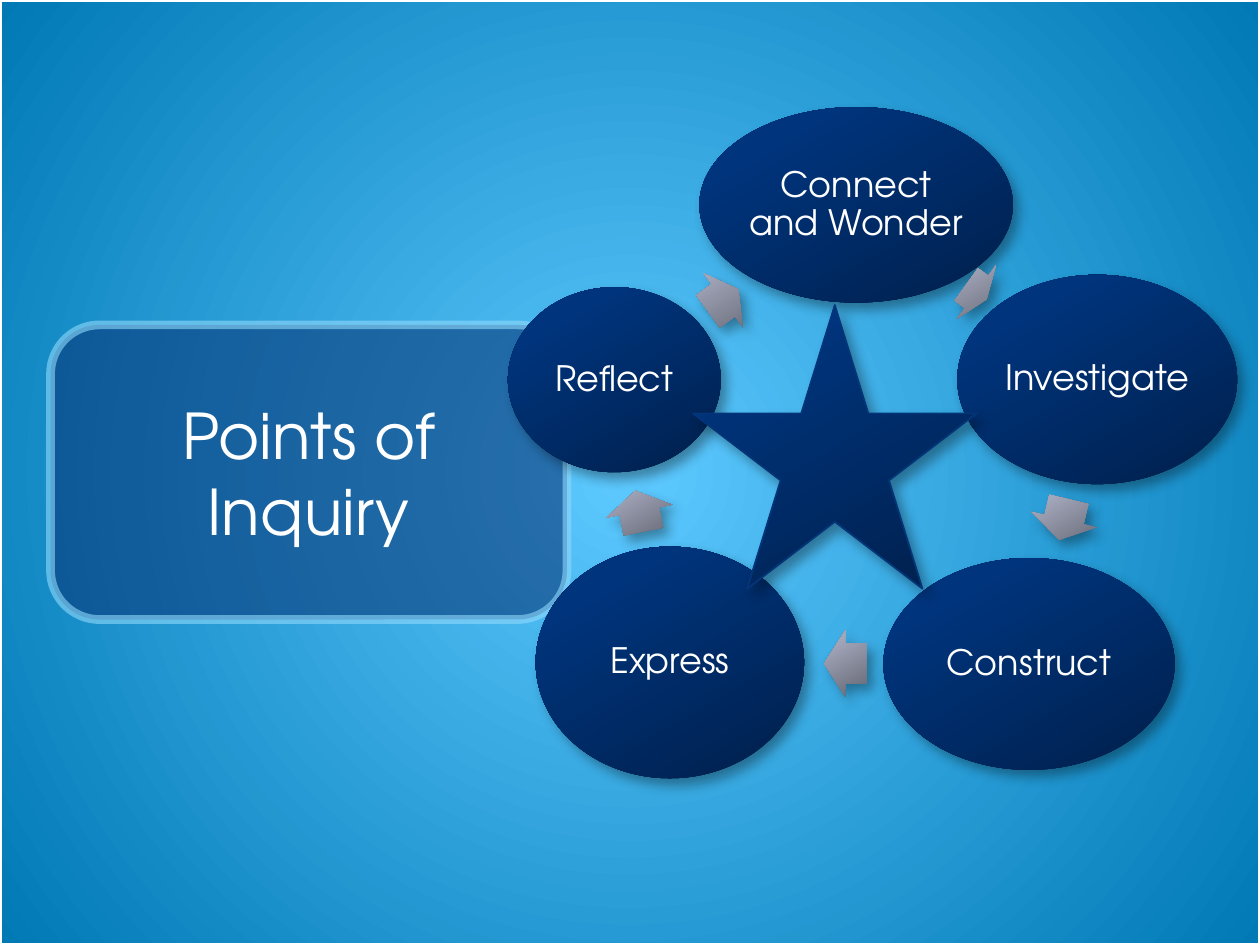
"""Build the Points of Inquiry slide: a title panel beside a five-step cycle around a star."""
from dataclasses import dataclass

from pptx import Presentation
from pptx.dml.color import RGBColor
from pptx.enum.shapes import MSO_SHAPE
from pptx.enum.text import MSO_ANCHOR, PP_ALIGN
from pptx.oxml import parse_xml
from pptx.oxml.ns import nsdecls, qn
from pptx.util import Cm, Pt

RECTANGLE = MSO_SHAPE.RECTANGLE
PANEL = MSO_SHAPE.ROUNDED_RECTANGLE
OVAL = MSO_SHAPE.OVAL
ARROW = MSO_SHAPE.RIGHT_ARROW
STAR = MSO_SHAPE.STAR_5_POINT
CENTER = PP_ALIGN.CENTER
MIDDLE = MSO_ANCHOR.MIDDLE

Stops = tuple[tuple[int, str], ...]


@dataclass(frozen=True)
class Theme:
    font: str = "TeX Gyre Adventor"
    title_size: int = 36
    step_size: int = 20
    text: str = "FFFFFF"
    frame: str = "FFFFFF"
    panel: str = "073779"
    panel_line: str = "8FD9FB"
    star_line: str = "043579"
    shadow: str = "000000"
    sky: Stops = ((0, "5DC9FF"), (100, "0079B5"))
    navy: Stops = ((0, "00204C"), (80, "00347C"), (100, "00347D"))
    gray: Stops = ((0, "646672"), (80, "A3A7BB"), (100, "A4A8BC"))


@dataclass(frozen=True)
class Place:
    left: float
    top: float
    width: float
    height: float
    turn: float = 0


@dataclass(frozen=True)
class Step:
    label: str
    oval: Place
    arrow: Place


THEME = Theme()
PAGE = Place(0, 0, 25.4, 19.05)
TITLE = Place(1.02, 6.55, 10.41, 5.94)
CENTER_STAR = Place(13.97, 6.15, 5.72, 5.72)
STEPS = (
    Step("Connect and Wonder", Place(14.1, 2.16, 6.32, 3.94), Place(19.43, 5.21, 0.51, 1.35, 36)),
    Step("Investigate", Place(19.3, 5.54, 5.64, 4.22), Place(21.03, 9.8, 0.84, 1.35, 103.4)),
    Step("Construct", Place(17.81, 11.25, 5.87, 4.27), Place(16.61, 12.7, 0.86, 1.35, 180.2)),
    Step("Express", Place(10.8, 11.02, 5.41, 4.67), Place(12.47, 9.63, 0.84, 1.35, 258.9)),
    Step("Reflect", Place(10.24, 5.79, 4.29, 3.73), Place(14.2, 5.38, 0.76, 1.35, 324)),
)
LINEAR = f'<a:lin ang="{240 * 60000}" scaled="0"/>'
RADIAL = '<a:path path="circle"><a:fillToRect l="50000" t="50000" r="50000" b="50000"/></a:path>'


def set_gradient(properties, stops: Stops, direction: str) -> None:
    """Replace the empty fill of a properties element by a gradient."""
    marks = "".join(
        f'<a:gs pos="{place * 1000}"><a:srgbClr val="{color}"/></a:gs>' for place, color in stops
    )
    gradient = parse_xml(
        f'<a:gradFill {nsdecls("a")} rotWithShape="0"><a:gsLst>{marks}</a:gsLst>{direction}</a:gradFill>'
    )
    properties.replace(properties.find(qn("a:noFill")), gradient)


def add_box(page, kind, place: Place):
    """Add an unfilled, unlined shape without shadow."""
    box = page.shapes.add_shape(
        kind, Cm(place.left), Cm(place.top), Cm(place.width), Cm(place.height)
    )
    box.rotation = place.turn
    box.shadow.inherit = False
    box.fill.background()
    box.line.fill.background()
    return box


def set_line(box, color: str, width: float) -> None:
    """Give a shape a solid outline."""
    box.line.color.rgb = RGBColor.from_string(color)
    box.line.width = Pt(width)


def add_raised(page, kind, place: Place, stops: Stops):
    """Add a gradient shape with a soft shadow."""
    box = add_box(page, kind, place)
    properties = box.element.spPr
    set_gradient(properties, stops, LINEAR)
    properties.find(qn("a:effectLst")).append(parse_xml(
        f'<a:outerShdw {nsdecls("a")} blurRad="{Pt(7)}" dist="{Pt(5)}" dir="{50 * 60000}"'
        f' algn="tl" rotWithShape="0"><a:srgbClr val="{THEME.shadow}">'
        '<a:alpha val="35000"/></a:srgbClr></a:outerShdw>'
    ))
    return box


def write(box, text: str, *, size: float, inset: float, spacing: float = 1) -> None:
    """Write centred text in a shape."""
    frame = box.text_frame
    frame.word_wrap = True
    frame.vertical_anchor = MIDDLE
    frame.margin_left = frame.margin_right = Cm(inset)
    frame.margin_top = frame.margin_bottom = Cm(inset)
    para = frame.paragraphs[0]
    para.alignment = CENTER
    para.line_spacing = spacing
    span = para.add_run()
    span.text = text
    span.font.name = THEME.font
    span.font.size = Pt(size)
    span.font.color.rgb = RGBColor.from_string(THEME.text)


def add_title(page) -> None:
    """Add the translucent title panel."""
    panel = add_box(page, PANEL, TITLE)
    panel.fill.solid()
    panel.fill.fore_color.rgb = RGBColor.from_string(THEME.panel)
    set_line(panel, THEME.panel_line, 5)
    for color in panel.element.spPr.iter(qn("a:srgbClr")):
        color.append(parse_xml(f'<a:alpha {nsdecls("a")} val="60000"/>'))
    write(panel, "Points of Inquiry", size=THEME.title_size, inset=0.25)


def add_step(page, step: Step) -> None:
    """Add one step of the cycle and the arrow that leaves it."""
    oval = add_raised(page, OVAL, step.oval, THEME.navy)
    write(oval, step.label, size=THEME.step_size, inset=0.08, spacing=0.9)
    arrow = add_raised(page, ARROW, step.arrow, THEME.gray)
    arrow.adjustments[0] = 0.6
    arrow.adjustments[1] = 0.5


def main() -> None:
    """Build and save the deck."""
    deck = Presentation()
    deck.slide_width, deck.slide_height = Cm(PAGE.width), Cm(PAGE.height)
    page = deck.slides.add_slide(deck.slide_layouts[6])
    page.background.fill.background()
    set_gradient(page.element.xpath(".//p:bgPr")[0], THEME.sky, RADIAL)
    set_line(add_box(page, RECTANGLE, PAGE), THEME.frame, 2)
    add_title(page)
    for step in STEPS:
        add_step(page, step)
    set_line(add_raised(page, STAR, CENTER_STAR, THEME.navy), THEME.star_line, 1)
    deck.save("out.pptx")


if __name__ == "__main__":
    main()
